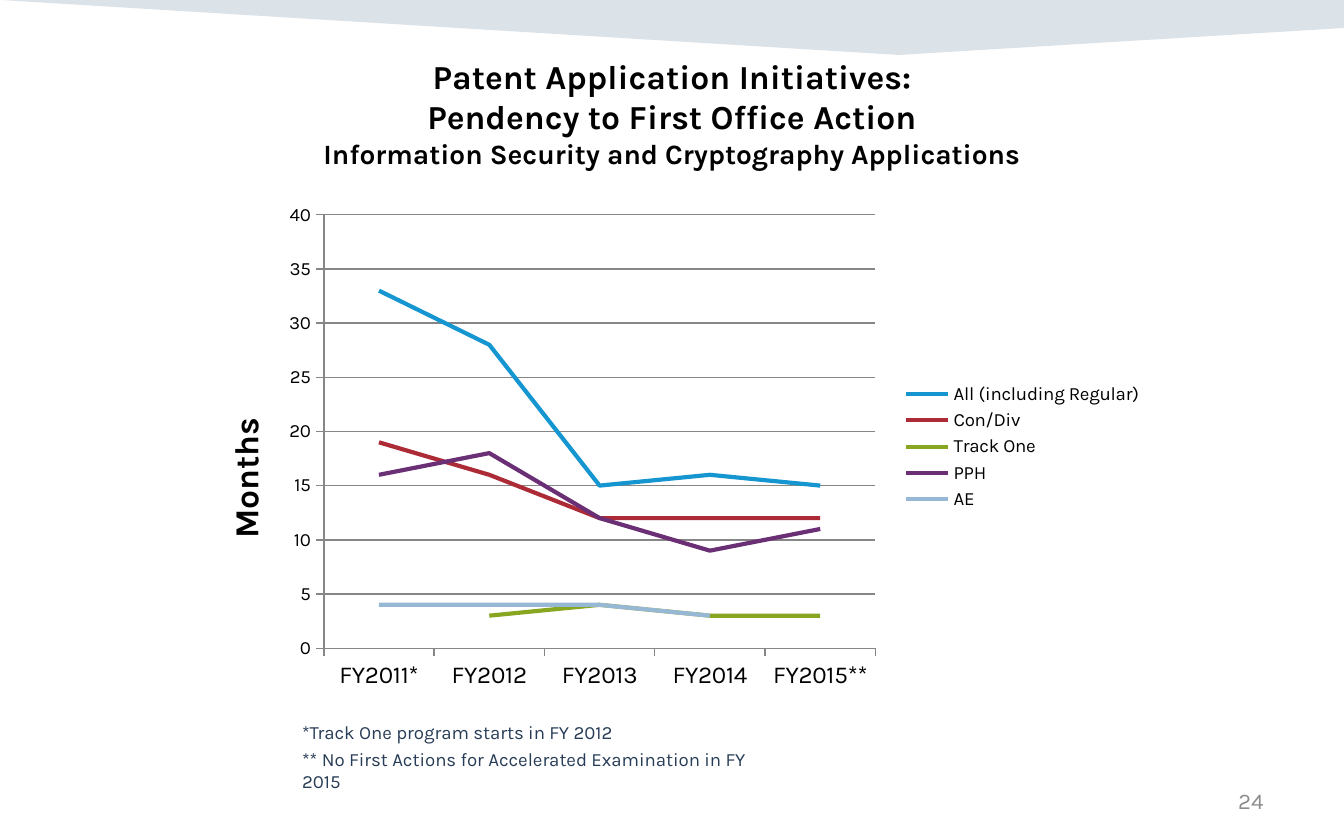
from lxml.etree import SubElement
from pptx import Presentation
from pptx.chart.data import CategoryChartData as ChartData
from pptx.dml.color import RGBColor
from pptx.enum.chart import XL_CHART_TYPE as Kind, XL_LEGEND_POSITION as Side
from pptx.enum.chart import XL_MARKER_STYLE as Mark, XL_TICK_MARK as Tick
from pptx.enum.text import MSO_ANCHOR as Anchor, PP_ALIGN as Align
from pptx.oxml import parse_xml
from pptx.oxml.ns import nsdecls, qn
from pptx.util import Cm, Pt

FACE = "Karla"
BLACK, NAVY, GREY, RULE = "000000", "273C56", "8C8C8C", "868686"
TITLE = [
    ("Patent Application Initiatives:", 18),
    ("Pendency to First Office Action", 18),
    ("Information Security and Cryptography Applications", 15),
]
NOTES = [
    "*Track One program starts in FY 2012",
    "** No First Actions for Accelerated Examination in FY 2015",
]
YEARS = ["FY2011*", "FY2012", "FY2013", "FY2014", "FY2015**"]
SERIES = [
    ("All (including Regular)", [33, 28, 15, 16, 15], "1596D1"),
    ("Con/Div", [19, 16, 12, 12, 12], "AC2B37"),
    ("Track One", [None, 3, 4, 3, 3], "88A620"),
    ("PPH", [16, 18, 12, 9, 11], "6B2F75"),
    ("AE", [4, 4, 4, 3, None], "97B8D4"),
]
BAND = [(0, 0), (25.4, 0), (25.4, 0.53), (16.99, 1.04)]


def box(*cms):
    return [Cm(n) for n in cms]


def paint(color, hue):
    color.rgb = RGBColor.from_string(hue)


def style(font, size, hue=BLACK, bold=False):
    font.name, font.size, font.bold = FACE, Pt(size), bold
    paint(font.color, hue)


def rule(line, hue, width):
    paint(line.color, hue)
    line.width = Pt(width)


def layout(**parts):
    body = "".join(f'<c:{key} val="{val}"/>' for key, val in parts.items())
    return parse_xml(f"<c:layout {nsdecls('c')}><c:manualLayout>{body}"
                     "</c:manualLayout></c:layout>")


def add_band(slide):
    pen = slide.shapes.build_freeform(0, 0)
    pen.add_line_segments([box(*spot) for spot in BAND[1:]], close=True)
    band = pen.convert_to_shape()
    band.shadow.inherit = False
    band.line.fill.background()
    band.fill.solid()
    paint(band.fill.fore_color, "164469")
    hue = band.fill._xPr.find(qn("a:solidFill"))[0]
    SubElement(hue, qn("a:alpha")).set("val", "15000")


def add_title(slide):
    title = slide.shapes.title
    title.left, title.top, title.width, title.height = box(1.27, 0.91, 22.86, 2.46)
    frame = title.text_frame
    frame.vertical_anchor = Anchor.MIDDLE
    para = frame.paragraphs[0]
    para.alignment = Align.CENTER
    for i, (text, size) in enumerate(TITLE):
        if i:
            para.add_line_break()
        run = para.add_run()
        run.text = text
        style(run.font, size, bold=True)


def add_text(slide, place, lines, size, hue, align=Align.LEFT, anchor=Anchor.TOP):
    frame = slide.shapes.add_textbox(*box(*place)).text_frame
    frame.word_wrap = True
    frame.vertical_anchor = anchor
    for i, text in enumerate(lines):
        para = frame.add_paragraph() if i else frame.paragraphs[0]
        para.text, para.alignment = text, align
        if i:
            para.space_before = Pt(2)
        style(para.font, size, hue)


def add_graph(slide):
    data = ChartData()
    data.categories = YEARS
    for name, vals, _ in SERIES:
        data.add_series(name, vals)
    place = box(3.56, 3.68, 18.29, 9.53)
    chart = slide.shapes.add_chart(Kind.LINE, *place, data).chart
    style(chart.font, 10)
    chart.has_title = False
    chart.has_legend = True
    chart.legend.position = Side.RIGHT
    chart.legend.include_in_layout = False
    chart.plots[0].vary_by_categories = False
    for line, (_, _, hue) in zip(chart.plots[0].series, SERIES):
        line.smooth = False
        line.marker.style = Mark.NONE
        rule(line.format.line, hue, 2.25)

    years, months = chart.category_axis, chart.value_axis
    for axis in (years, months):
        axis.major_tick_mark, axis.minor_tick_mark = Tick.OUTSIDE, Tick.NONE
        rule(axis.format.line, RULE, 0.75)
    style(years.tick_labels.font, 13)
    months.minimum_scale, months.maximum_scale, months.major_unit = 0, 40, 5
    rule(months.major_gridlines.format.line, RULE, 0.75)
    para = months.axis_title.text_frame.paragraphs[0]
    para.text = "Months"
    style(para.font, 18, bold=True)

    head = months.axis_title._element
    for old in head.findall(qn("c:layout")):
        head.remove(old)
    head.find(qn("c:tx")).addnext(
        layout(xMode="edge", yMode="edge", x=0.03, y=0.43))
    area = chart._chartSpace.chart.plotArea
    for old in area.findall(qn("c:layout")):
        area.remove(old)
    area.insert(0, layout(layoutTarget="inner", xMode="edge", yMode="edge",
                          x=0.14, y=0.04, w=0.57, h=0.86))


def main():
    deck = Presentation()
    deck.slide_width, deck.slide_height = box(25.4, 15.88)
    slide = deck.slides.add_slide(deck.slide_layouts[5])
    add_band(slide)
    add_title(slide)
    add_text(slide, (5.46, 13.51, 9.6, 1.19), NOTES, 10, NAVY)
    add_graph(slide)
    add_text(slide, (18.21, 14.71, 5.92, 0.84), ["24"], 12, GREY,
             Align.RIGHT, Anchor.MIDDLE)
    deck.save("out.pptx")


if __name__ == "__main__":
    main()
